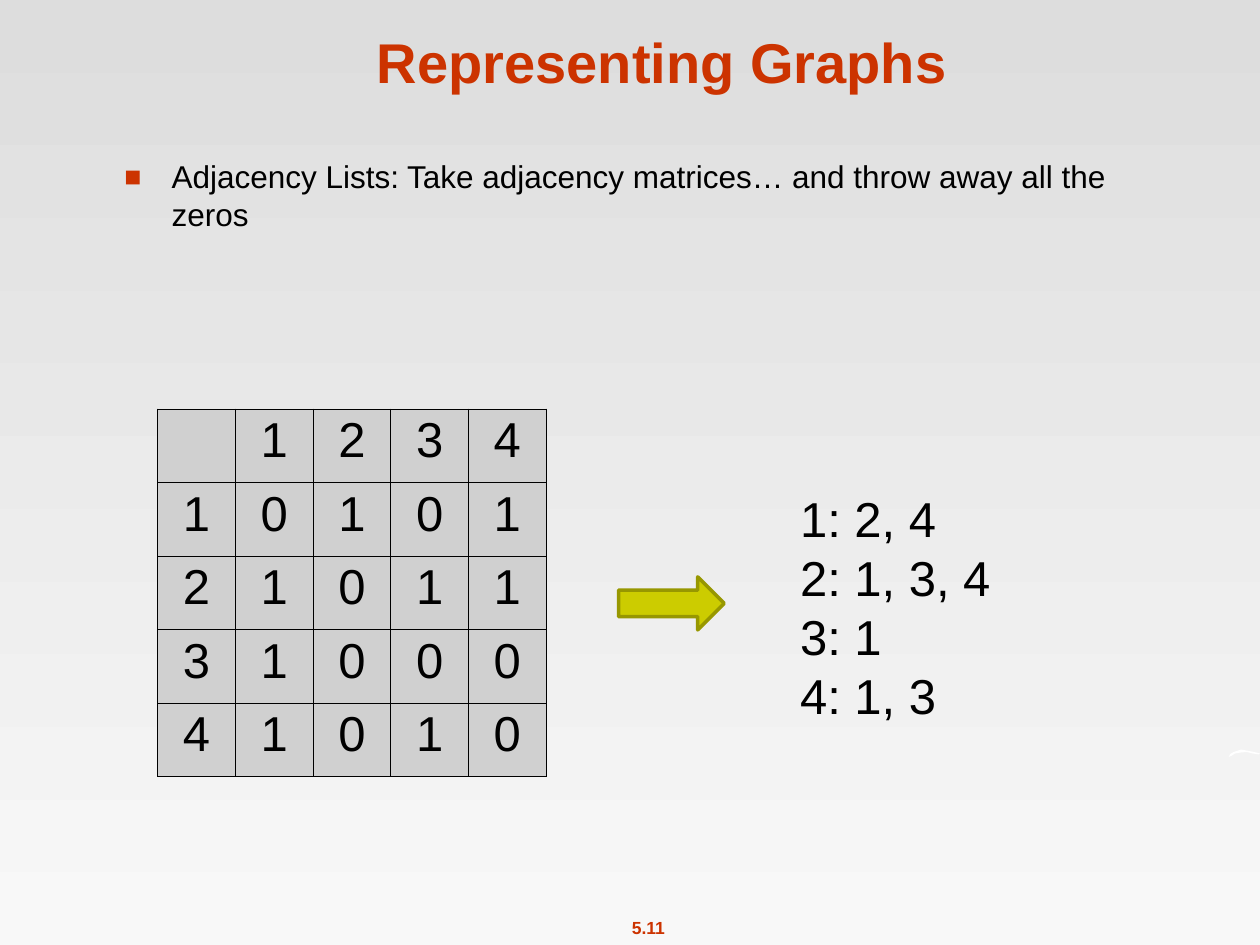
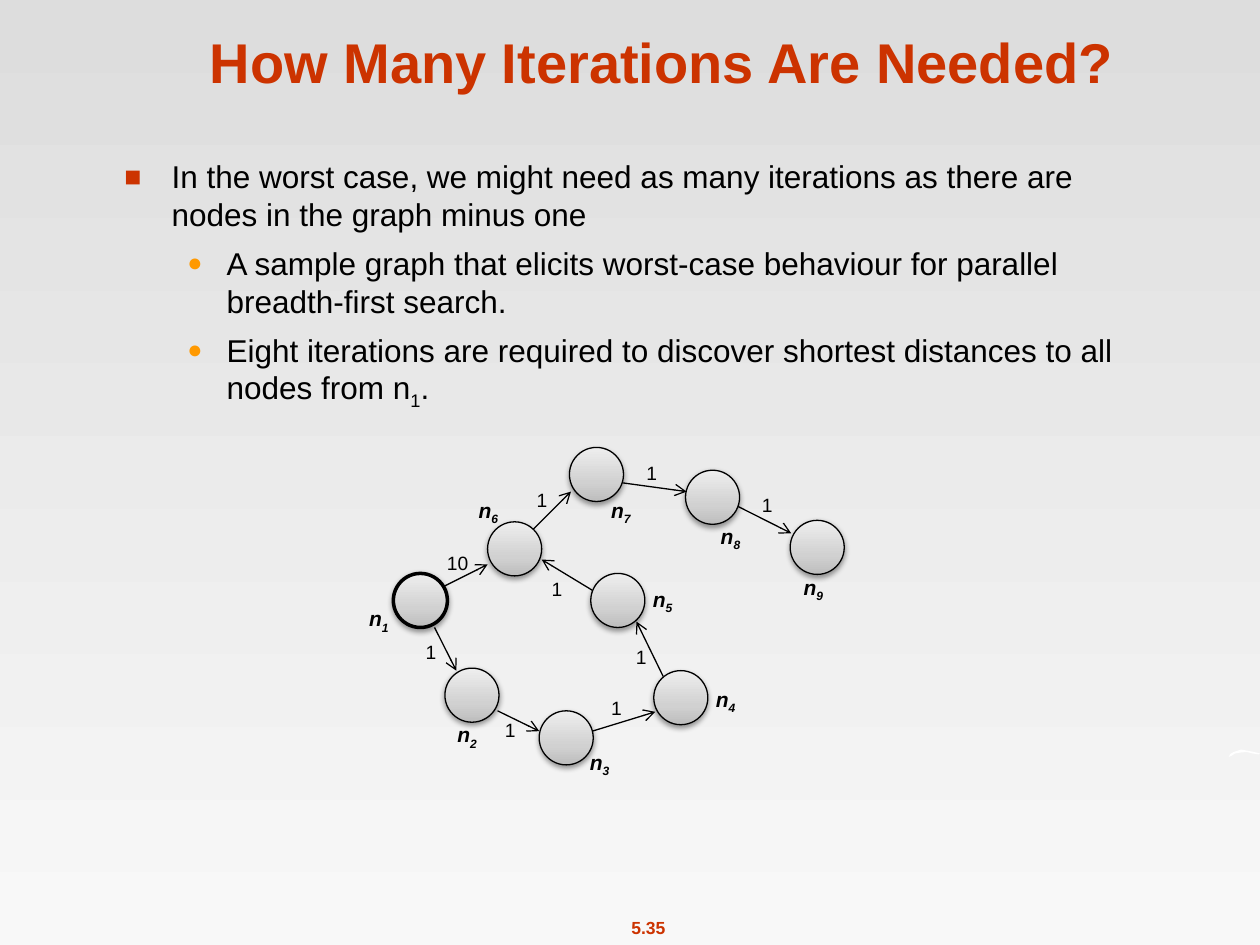
from copy import deepcopy
from dataclasses import dataclass

from lxml import etree
from pptx import Presentation
from pptx.dml.color import RGBColor
from pptx.enum import shapes, text
from pptx.oxml import ns
from pptx.util import Cm, Pt


@dataclass(frozen=True)
class Theme:
    font: str = "Arial"
    accent: str = "CC3300"
    ink: str = "000000"
    second_bullet: str = "FF9900"
    cell: str = "D0D0D0"
    arrow: str = "CCCC00"
    arrow_edge: str = "979700"
    swoosh: str = "FFFFFF"
    backdrop: tuple = ((0, "DDDDDD"), (1, "F8F8F8"))
    node: tuple = ((0, "BDBDBD"), (0.35, "D1D1D1"), (1, "EEEEEE"))
    title_size: float = 32
    matrix_size: float = 28
    body_size: float = 18
    node_size: float = 12
    weight_size: float = 11
    footer_size: float = 10
    thin: float = 0.75
    thick: float = 2


THEME = Theme()

TITLE_BOX = (2.13, 0.33, 22.43, 1.7)
BODY_BOX = (2.26, 3.05, 21.29, 13.61)
FOOTER_BOX = (12.45, 18.36, 1.24, 0.69)
SWOOSH_AT = (24.77, 15.11)
SWOOSH = [(0, 15), (3, 9), (10, 5), (25, 0), (41, 3), (51, 5), (63, 8),
          (61, 10), (48, 8), (36, 5), (25, 6), (13, 8), (5, 13)]  # hundredths of a cm

# left indent and hanging indent in cm, sign, colour, size in percent
BULLETS = [(0.95, -0.95, "■", THEME.accent, 90),
           (2.06, -0.79, "●", THEME.second_bullet, 80)]

ADJACENCY = [[0, 1, 0, 1],
             [1, 0, 1, 1],
             [1, 0, 0, 0],
             [1, 0, 1, 0]]

# node and label corners in cm, relative to the graph's box
NODES = [((0.74, 2.54), (0, 3.07)),
         ((1.78, 4.45), (1.78, 5.41)),
         ((3.68, 5.31), (4.45, 5.97)),
         ((5.99, 4.5), (6.99, 4.7)),
         ((4.72, 2.54), (5.72, 2.67)),
         ((2.64, 1.5), (2.21, 0.89)),
         ((4.29, 0), (4.88, 0.89)),
         ((6.63, 0.46), (7.09, 1.4)),
         ((8.74, 1.47), (8.76, 2.44))]
# start, end, weight, corner of the weight
EDGES = [((1.57, 3.63), (2.01, 4.5), "1", (1.14, 3.76)),
         ((1.78, 2.79), (2.64, 2.36), "10", (1.57, 1.96)),
         ((2.84, 5.31), (3.68, 5.72), "1", (2.74, 5.33)),
         ((4.75, 5.72), (6.02, 5.33), "1", (4.88, 4.9)),
         ((6.22, 4.7), (5.64, 3.51), "1", (5.38, 3.86)),
         ((4.95, 3), (3.73, 2.26), "1", (3.68, 2.49)),
         ((3.48, 1.73), (4.32, 0.89), "1", (3.38, 0.69)),
         ((5.18, 0.69), (6.65, 0.89), "1", (5.59, 0.15)),
         ((7.49, 1.09), (8.76, 1.73), "1", (7.92, 0.79))]
NODE_DIAMETER = 1.09


def cm(*lengths):
    return [Cm(length) for length in lengths]


def rgb(colour):
    return RGBColor.from_string(colour)


def add_xml(parent, tag, **attributes):
    return etree.SubElement(parent, ns.qn(tag), attributes)


def add_colour(parent, colour):
    return add_xml(parent, "a:srgbClr", val=colour)


def paint_gradient(fill, stops, angle):
    fill.gradient()
    fill.gradient_angle = angle
    first = fill.gradient_stops[0]._gs
    for _ in stops[2:]:
        first.addnext(deepcopy(first))
    for stop, (position, colour) in zip(fill.gradient_stops, stops):
        stop.position = position
        stop.color.rgb = rgb(colour)


def paint(shape, fill, line=None, width=0):
    shape.shadow.inherit = False
    shape.fill.solid()
    shape.fill.fore_color.rgb = rgb(fill)
    if line:
        shape.line.color.rgb = rgb(line)
        shape.line.width = Pt(width)
    else:
        shape.line.fill.background()


def style_runs(paragraph, size, colour=THEME.ink, bold=False, italic=False):
    for run in paragraph.runs:
        font = run.font
        font.name, font.size = THEME.font, Pt(size)
        font.bold, font.italic = bold, italic
        font.color.rgb = rgb(colour)


def write_pieces(paragraph, pieces):
    """Every second piece is a subscript."""
    for index, piece in enumerate(pieces):
        run = paragraph.add_run()
        run.text = piece
        if index % 2:
            run._r.get_or_add_rPr().set("baseline", "-25000")


def add_label(parent, box, pieces, size, align=None, **style):
    label = parent.add_textbox(*cm(*box))
    label.text_frame.word_wrap = False
    label.text_frame.auto_size = text.MSO_AUTO_SIZE.SHAPE_TO_FIT_TEXT
    paragraph = label.text_frame.paragraphs[0]
    paragraph.alignment = align
    write_pieces(paragraph, pieces)
    style_runs(paragraph, size, **style)


def add_swoosh(slide, left, top):
    outline = slide.shapes.build_freeform(*SWOOSH[0], scale=Cm(0.01))
    outline.add_line_segments(SWOOSH[1:])
    paint(outline.convert_to_shape(*cm(left, top)), THEME.swoosh)


def add_titled_slide(deck, heading, number):
    slide = deck.slides.add_slide(deck.slide_layouts[5])
    add_label(slide.shapes, FOOTER_BOX, [number], THEME.footer_size,
              text.PP_ALIGN.CENTER, colour=THEME.accent, bold=True)
    add_swoosh(slide, *SWOOSH_AT)
    title = slide.shapes.title
    title.left, title.top, title.width, title.height = cm(*TITLE_BOX)
    frame = title.text_frame
    frame.text = heading
    frame.vertical_anchor = text.MSO_ANCHOR.BOTTOM
    frame.paragraphs[0].alignment = text.PP_ALIGN.CENTER
    style_runs(frame.paragraphs[0], THEME.title_size, THEME.accent, bold=True)
    return slide


def add_bullets(slide, box, items):
    frame = slide.shapes.add_textbox(*cm(*box)).text_frame
    frame.word_wrap = True
    for index, (level, *pieces) in enumerate(items):
        paragraph = frame.add_paragraph() if index else frame.paragraphs[0]
        paragraph.level = level
        paragraph.space_before = Pt(0.35 * THEME.body_size)
        write_pieces(paragraph, pieces)
        style_runs(paragraph, THEME.body_size)
        margin, indent, sign, colour, percent = BULLETS[level]
        properties = paragraph._p.get_or_add_pPr()
        properties.set("marL", str(Cm(margin)))
        properties.set("indent", str(Cm(indent)))
        add_colour(add_xml(properties, "a:buClr"), colour)
        add_xml(properties, "a:buSzPct", val=str(percent * 1000))
        add_xml(properties, "a:buFont", typeface=THEME.font)
        add_xml(properties, "a:buChar", char=sign)


def style_cell(cell):
    properties = cell._tc.get_or_add_tcPr()
    for side in "LRTB":
        border = add_xml(properties, f"a:ln{side}", w=str(Pt(THEME.thin)))
        add_colour(add_xml(border, "a:solidFill"), THEME.ink)
    cell.fill.solid()
    cell.fill.fore_color.rgb = rgb(THEME.cell)
    cell.vertical_anchor = text.MSO_ANCHOR.MIDDLE
    paragraph = cell.text_frame.paragraphs[0]
    paragraph.alignment = text.PP_ALIGN.CENTER
    paragraph.line_spacing = 0.71
    paragraph.space_before = Pt(8)
    style_runs(paragraph, THEME.matrix_size)


def add_matrix(slide, box, matrix):
    names = range(1, len(matrix) + 1)
    rows = [["", *names]] + [[name, *row] for name, row in zip(names, matrix)]
    grid = slide.shapes.add_table(len(rows), len(rows[0]), *cm(*box)).table
    grid.first_row = grid.horz_banding = False
    for r, row in enumerate(rows):
        for c, value in enumerate(row):
            cell = grid.cell(r, c)
            cell.text = str(value)
            style_cell(cell)


def add_adjacency_lists(slide, box, matrix):
    frame = slide.shapes.add_textbox(*cm(*box)).text_frame
    frame.word_wrap = False
    frame.auto_size = text.MSO_AUTO_SIZE.SHAPE_TO_FIT_TEXT
    frame.text = "\n".join(
        f"{source}: " + ", ".join(str(target) for target, linked in enumerate(row, 1) if linked)
        for source, row in enumerate(matrix, 1))
    for paragraph in frame.paragraphs:
        style_runs(paragraph, THEME.matrix_size)


def add_block_arrow(slide, box):
    arrow = slide.shapes.add_shape(shapes.MSO_SHAPE.RIGHT_ARROW, *cm(*box))
    paint(arrow, THEME.arrow, THEME.arrow_edge, THEME.thick)


def add_edge(parent, start, end):
    edge = parent.add_connector(shapes.MSO_CONNECTOR.STRAIGHT, *cm(*start, *end))
    edge.line.color.rgb = rgb(THEME.ink)
    edge.line.width = Pt(THEME.thin)
    add_xml(edge.line._get_or_add_ln(), "a:tailEnd", type="arrow")
    add_xml(edge._element.spPr, "a:effectLst")


def add_node(parent, corner, width):
    node = parent.add_shape(shapes.MSO_SHAPE.OVAL,
                            *cm(*corner, NODE_DIAMETER, NODE_DIAMETER))
    paint_gradient(node.fill, THEME.node, 90)
    node.line.color.rgb = rgb(THEME.ink)
    node.line.width = Pt(width)
    node.shadow.inherit = False
    effects = node._element.spPr.find(ns.qn("a:effectLst"))
    shadow = add_xml(effects, "a:outerShdw", blurRad=str(Pt(3.1)), dist=str(Pt(1.6)),
                     dir="5400000", rotWithShape="0")
    add_xml(add_colour(shadow, THEME.ink), "a:alpha", val="38000")


def add_graph(slide, left, top):
    parent = slide.shapes.add_group_shape().shapes

    def place(point):
        return left + point[0], top + point[1]

    for start, end, _, _ in EDGES:
        add_edge(parent, place(start), place(end))
    for number, (corner, label_corner) in enumerate(NODES, 1):
        add_node(parent, place(corner), THEME.thick if number == 1 else THEME.thin)
        add_label(parent, (*place(label_corner), 0.94, 0.76), ["n", str(number)],
                  THEME.node_size, bold=True, italic=True)
    for _, _, weight, corner in EDGES:
        add_label(parent, (*place(corner), 0.54 + 0.2 * len(weight), 0.74),
                  [weight], THEME.weight_size)


def build_representation(deck):
    slide = add_titled_slide(deck, "Representing Graphs", "5.11")
    add_bullets(slide, BODY_BOX, [
        (0, "Adjacency Lists: Take adjacency matrices… and throw away all the zeros")])
    add_matrix(slide, (3.18, 8.25, 7.83, 7.41), ADJACENCY)
    add_adjacency_lists(slide, (15.88, 9.73, 4.45, 5.05), ADJACENCY)
    add_block_arrow(slide, (12.47, 11.63, 2.13, 1.07))


def build_iterations(deck):
    slide = add_titled_slide(deck, "How Many Iterations Are Needed?", "5.35")
    add_bullets(slide, BODY_BOX, [
        (0, "In the worst case, we might need as many iterations as there are "
            "nodes in the graph minus one"),
        (1, "A sample graph that elicits worst-case behaviour for parallel "
            "breadth-first search."),
        (1, "Eight iterations are required to discover shortest distances to "
            "all nodes from n", "1", ".")])
    add_graph(slide, 7.19, 9.02)


def main():
    deck = Presentation()
    deck.slide_width, deck.slide_height = cm(25.4, 19.05)
    paint_gradient(deck.slide_master.background.fill, THEME.backdrop, 270)
    build_representation(deck)
    build_iterations(deck)
    deck.save("out.pptx")


if __name__ == "__main__":
    main()
